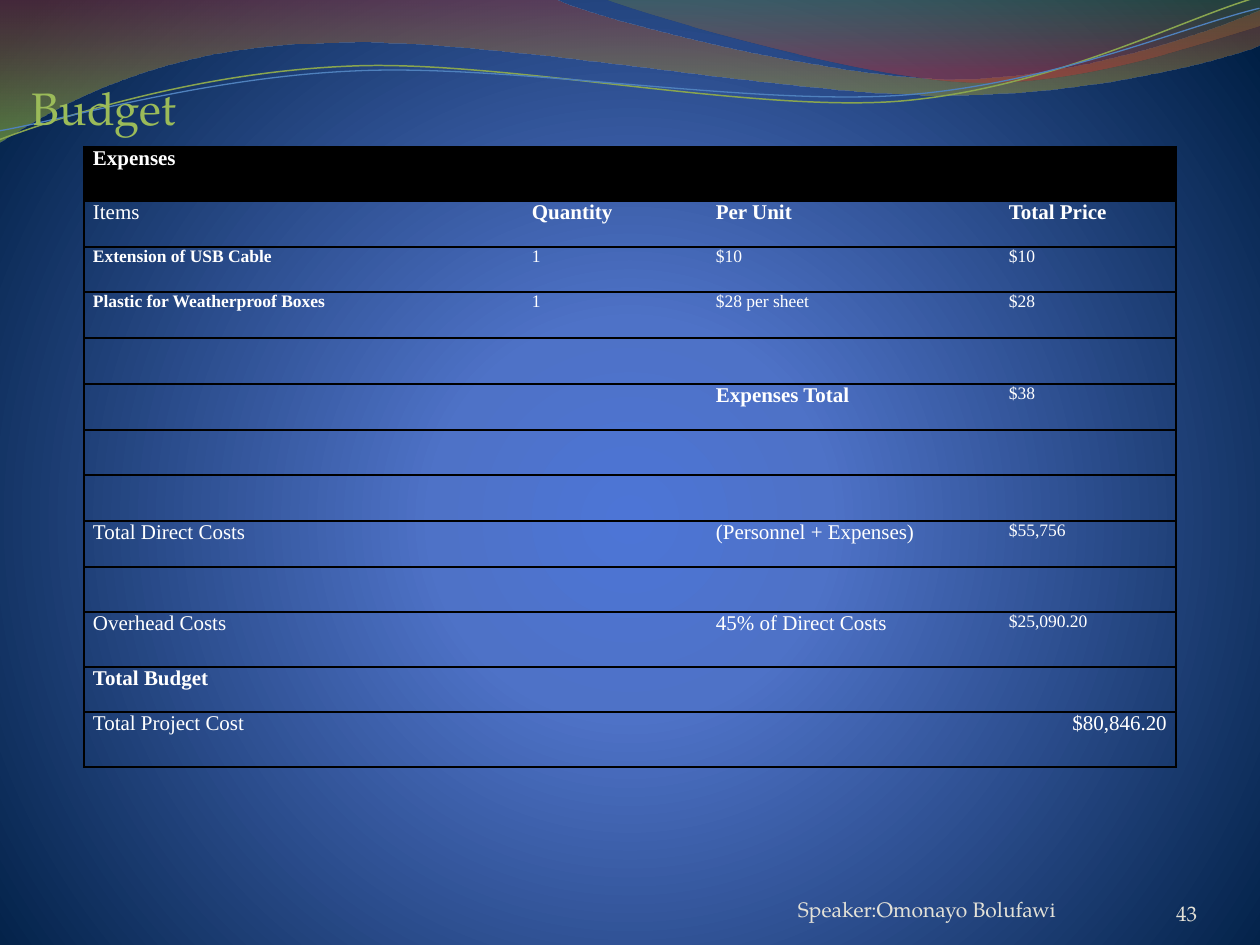
from lxml import etree
from pptx import Presentation
from pptx.dml.color import RGBColor
from pptx.enum.text import MSO_ANCHOR, PP_ALIGN
from pptx.oxml import parse_xml
from pptx.oxml.ns import nsdecls, qn
from pptx.util import Pt

LEFT, RIGHT = PP_ALIGN.LEFT, PP_ALIGN.RIGHT
TOP, BOTTOM = MSO_ANCHOR.TOP, MSO_ANCHOR.BOTTOM
PX = 914400 // 126
SERIF, BODY = "TeX Gyre Pagella", "Times New Roman"
PLAIN_TABLE = "{2D5ABB26-0587-4C30-8999-92F81FD0307C}"
COLORS = {
    "title": "9BBB59", "footer": "E3E1D7", "text": "FFFFFF", "rule": "000000",
    "center": "4D75D6", "middle": "4E72C7", "edge": "001F44",
    "red": "973330", "lime": "95C238", "olive": "769537", "crimson": "BE3330",
    "green_line": "89A54F", "blue_line": "4F81BD",
}


def write(tf, text, size=12, font=BODY, color="text", bold=False, align=LEFT, before=0):
    p = tf.paragraphs[0]
    p.alignment = align
    p.space_before = Pt(before)
    r = p.add_run()
    r.text = text
    r.font.size, r.font.name, r.font.bold = Pt(size), font, bold
    r.font.color.rgb = RGBColor.from_string(COLORS[color])


def set_gradient(fill, element, stops, direction):
    """Fill with (position %, colour, opacity %) stops and a DrawingML direction."""
    fill.gradient()
    old = next(element.iter(qn("a:gradFill")))
    gs = "".join(
        f'<a:gs pos="{pos * 1000}"><a:srgbClr val="{COLORS[color]}">'
        f'<a:alpha val="{opacity * 1000}"/></a:srgbClr></a:gs>'
        for pos, color, opacity in stops)
    new = parse_xml(f'<a:gradFill {nsdecls("a")} rotWithShape="1">'
                    f'<a:gsLst>{gs}</a:gsLst>{direction}</a:gradFill>')
    old.getparent().replace(old, new)


prs = Presentation()
prs.slide_width, prs.slide_height = 1260 * PX, 945 * PX
s = prs.slides.add_slide(prs.slide_layouts[6])
set_gradient(
    s.background.fill, s.element,
    [(0, "center", 100), (25, "middle", 100), (100, "edge", 100)],
    '<a:path path="circle"><a:fillToRect l="10000" t="110000" r="10000" b="100000"/></a:path>')

# Waves: a segment is one point (straight) or three points (Bezier curve)
WAVES = [
    ((0, 0),
     [[(554, -1)],
      [(600, 21), (837, 79), (955, 79)], [(1075, 79), (1207, 33), (1260, 11)],
      [(1261, 45)],
      [(1239, 55), (1096, 96), (940, 95)], [(783, 95), (481, 35), (324, 43)],
      [(163, 45), (58, 105), (-1, 142)]],
     [(0, "red", 45), (100, "lime", 55)], None),
    ((604, -1),
     [[(641, 14), (859, 78), (969, 82)], [(1079, 87), (1211, 40), (1260, 26)],
      [(1260, 0)]],
     [(0, "olive", 30), (80, "crimson", 45)], None),
    ((-3, 110),
     [[(59, 90), (199, 52), (350, 53)], [(499, 53), (745, 118), (896, 114)],
      [(1049, 109), (1184, 45), (1260, 27)]],
     None, ("green_line", 0.85)),
    ((-2, 101),
     [[(57, 94), (207, 57), (357, 58)], [(508, 58), (751, 112), (902, 108)],
      [(1053, 104), (1187, 52), (1262, 38)]],
     None, ("blue_line", 0.75)),
]
for start, segments, stops, line in WAVES:
    builder = s.shapes.build_freeform(*start, scale=PX)
    builder.add_line_segments(sum(segments, []), close=line is None)
    sp = builder.convert_to_shape()
    sp.shadow.inherit = False
    nodes = iter(list(sp.element.iter(qn("a:lnTo"))))
    for segment in segments:
        first, *others = [next(nodes) for _ in segment]
        if others:
            first.tag = qn("a:cubicBezTo")
        for node in others:
            first.append(node[0])
            node.getparent().remove(node)
    if line:
        color, width = line
        sp.rotation = 357.3
        sp.fill.background()
        sp.line.color.rgb = RGBColor.from_string(COLORS[color])
        sp.line.width = Pt(width)
    else:
        set_gradient(sp.fill, sp.element, stops, '<a:lin ang="5400000" scaled="1"/>')
        sp.line.fill.background()

# Title and footer
TEXTS = [
    ((32, 74, 1176, 829), "Budget", TOP, 6,
     dict(size=26, color="title", before=5)),
    ((798, 872, 462, 50), "Speaker:Omonayo Bolufawi", BOTTOM, 0,
     dict(color="footer")),
    ((1092, 876, 105, 50), "43", BOTTOM, 0,
     dict(color="footer", align=RIGHT)),
]
for box, text, anchor, inset, style in TEXTS:
    tf = s.shapes.add_textbox(*(v * PX for v in box)).text_frame
    tf.word_wrap = True
    tf.vertical_anchor = anchor
    tf.margin_left = tf.margin_right = 0
    tf.margin_top = tf.margin_bottom = inset * PX
    write(tf, text, font=SERIF, **style)

# Budget table
BOLD, SMALL, SMALL_BOLD = dict(bold=True), dict(size=10), dict(size=10, bold=True)
COLS = [439, 184, 293, 176]
ROWS = [
    (54, {0: ("Expenses", BOLD)}),
    (46, {0: ("Items", {}), 1: ("Quantity", BOLD), 2: ("Per Unit", BOLD),
          3: ("Total Price", BOLD)}),
    (45, {0: ("Extension of USB Cable", SMALL_BOLD), 1: ("1", SMALL),
          2: ("$10", SMALL), 3: ("$10", SMALL)}),
    (46, {0: ("Plastic for Weatherproof Boxes", SMALL_BOLD), 1: ("1", SMALL),
          2: ("$28 per sheet", SMALL), 3: ("$28", SMALL)}),
    (46, {}),
    (46, {2: ("Expenses Total", BOLD), 3: ("$38", SMALL)}),
    (45, {}),
    (46, {}),
    (46, {0: ("Total Direct Costs", {}), 2: ("(Personnel + Expenses)", {}),
          3: ("$55,756", SMALL)}),
    (45, {}),
    (55, {0: ("Overhead Costs", {}), 2: ("45% of Direct Costs", {}),
          3: ("$25,090.20", SMALL)}),
    (45, {0: ("Total Budget", BOLD)}),
    (55, {0: ("Total Project Cost", {}), 3: ("$80,846.20", dict(align=RIGHT))}),
]
table = s.shapes.add_table(len(ROWS), len(COLS), 84 * PX, 147 * PX, sum(COLS) * PX,
                           sum(height for height, _ in ROWS) * PX).table
table.first_row = table.horz_banding = False
next(table._tbl.iter(qn("a:tableStyleId"))).text = PLAIN_TABLE
for col, width in zip(table.columns, COLS):
    col.width = width * PX
for i, (height, texts) in enumerate(ROWS):
    table.rows[i].height = height * PX
    for j in range(len(COLS)):
        cell = table.cell(i, j)
        cell.margin_left = cell.margin_right = 9 * PX
        cell.margin_top = cell.margin_bottom = 0
        sides = ["L"] * (j == 0) + ["R"] * (j == len(COLS) - 1) + ["T", "B"]
        for side in sides:
            ln = etree.SubElement(cell._tc.get_or_add_tcPr(), qn(f"a:ln{side}"), w=str(Pt(1)))
            solid = etree.SubElement(ln, qn("a:solidFill"))
            etree.SubElement(solid, qn("a:srgbClr"), val=COLORS["rule"])
        if i == 0:
            cell.fill.solid()
            cell.fill.fore_color.rgb = RGBColor.from_string(COLORS["rule"])
        else:
            cell.fill.background()
        if j in texts:
            text, style = texts[j]
            write(cell.text_frame, text, **style)

prs.save("out.pptx")
